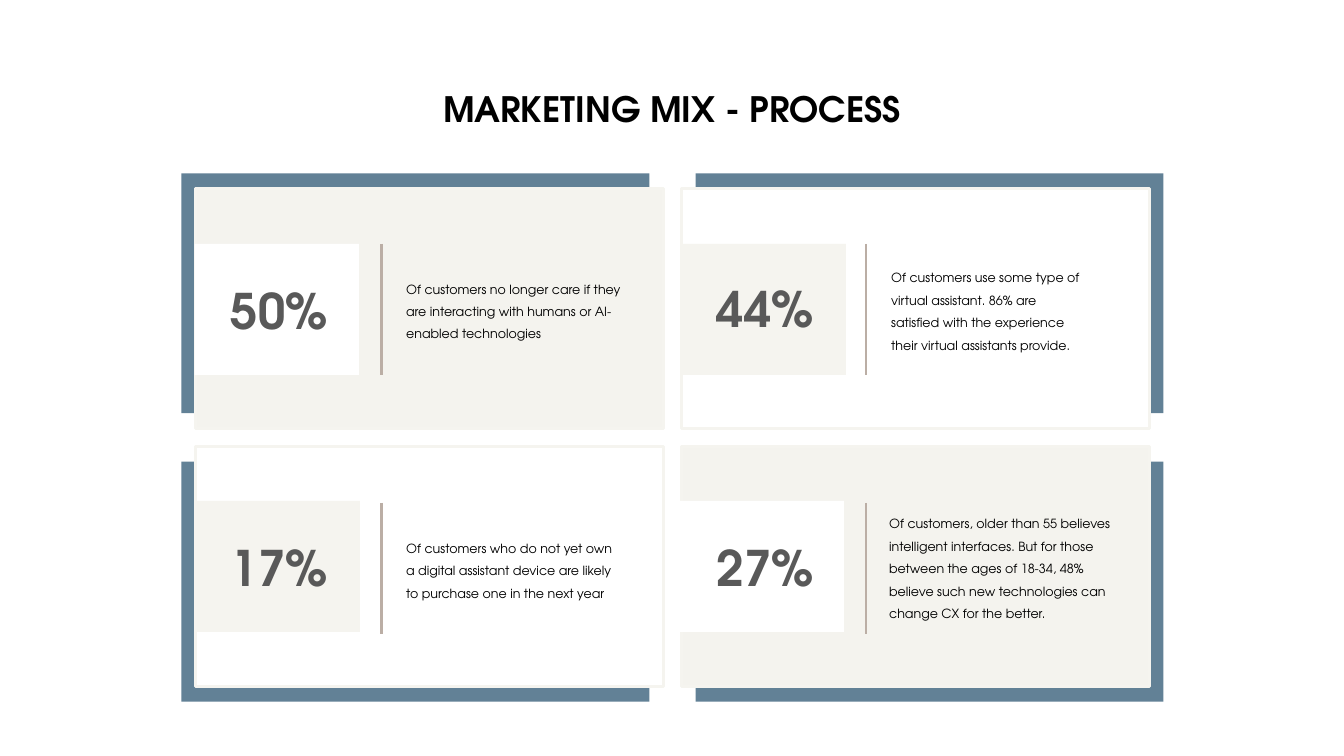
from pptx import Presentation
from pptx.dml.color import RGBColor
from pptx.enum.shapes import MSO_CONNECTOR, MSO_SHAPE
from pptx.enum.text import MSO_ANCHOR, PP_ALIGN
from pptx.oxml.ns import qn
from pptx.util import Inches, Pt

RECTANGLE, STRAIGHT = MSO_SHAPE.RECTANGLE, MSO_CONNECTOR.STRAIGHT
MIDDLE, LEFT, CENTER = MSO_ANCHOR.MIDDLE, PP_ALIGN.LEFT, PP_ALIGN.CENTER
FONT = "TeX Gyre Adventor"
BLUE, CREAM, WHITE = "628196", "F4F3EE", "FFFFFF"
BORDER, DIVIDER = "F5F4EF", "BBAEA5"
BLACK, GREY = "000000", "595959"
CARD_WIDTH, CARD_HEIGHT = 4.64, 2.38
CHIP_WIDTH, CHIP_HEIGHT = 1.63, 1.3

COLUMNS = [
    {"frame": 1.8, "card": 1.94, "divider": 3.78, "number": 2.19},
    {"frame": 6.9, "card": 6.76, "divider": 8.59, "number": 7.01},
]
ROWS = [
    {"frame": 1.72, "card": 1.87, "divider": 2.42, "chip": 2.42},
    {"frame": 4.58, "card": 4.43, "divider": 4.99, "chip": 4.97},
]
# column, row, card fill, chip fill, chip left, number top, percentage, statement box, statement
CARDS = [
    (0, 0, CREAM, WHITE, 1.93, 2.73, "50%", (3.93, 2.68, 2.32, 0.75),
     "Of customers no longer care if they are interacting with humans or "
     "AI-enabled technologies"),
    (1, 0, WHITE, BORDER, 6.76, 2.71, "44%", (8.74, 2.57, 2.09, 0.97),
     "Of customers use some type of virtual assistant. 86% are satisfied with "
     "the experience their virtual assistants provide."),
    (0, 1, WHITE, BORDER, 1.94, 5.28, "17%", (3.93, 5.25, 2.32, 0.75),
     "Of customers who do not yet own a digital assistant device are likely "
     "to purchase one in the next year"),
    (1, 1, CREAM, WHITE, 6.74, 5.28, "27%", (8.72, 5.01, 2.48, 1.19),
     "Of customers, older than 55 believes intelligent interfaces. But for "
     "those between the ages of 18-34, 48% believe such new technologies can "
     "change CX for the better."),
]

prs = Presentation()
prs.slide_width, prs.slide_height = Inches(13.33), Inches(7.5)
slide = prs.slides.add_slide(prs.slide_layouts[5])
shapes = slide.shapes


def add_panel(left, top, width, height, fill, border=None):
    panel = shapes.add_shape(
        RECTANGLE, Inches(left), Inches(top), Inches(width), Inches(height))
    panel.shadow.inherit = False
    panel.fill.solid()
    panel.fill.fore_color.rgb = RGBColor.from_string(fill)
    if border:
        panel.line.color.rgb = RGBColor.from_string(border)
        panel.line.width = Pt(2)
    else:
        panel.line.fill.background()


def write_text(box, text, color, frame_format, paragraph_format, font_format):
    frame = box.text_frame
    frame.text = text
    paragraph = frame.paragraphs[0]
    font = paragraph.runs[0].font
    font.color.rgb = RGBColor.from_string(color)
    font.name = FONT
    for target, values in ((frame, frame_format), (paragraph, paragraph_format),
                           (font, font_format)):
        for attribute, value in values.items():
            setattr(target, attribute, value)


title = shapes.title
title.left, title.top, title.width, title.height = map(Inches, (4.27, 0.82, 4.79, 0.52))
write_text(title, "MARKETING MIX - PROCESS", BLACK,
           {"word_wrap": False, "vertical_anchor": MIDDLE},
           {"alignment": CENTER}, {"size": Pt(25), "bold": True})

for row in ROWS:
    for column in COLUMNS:
        add_panel(column["frame"], row["frame"], CARD_WIDTH, CARD_HEIGHT, BLUE)

for (column_index, row_index, card_fill, chip_fill, chip_left, number_top,
     percentage, statement_box, statement) in CARDS:
    column, row = COLUMNS[column_index], ROWS[row_index]
    add_panel(column["card"], row["card"], CARD_WIDTH, CARD_HEIGHT, card_fill, BORDER)

    divider_x, divider_y = Inches(column["divider"]), row["divider"]
    divider = shapes.add_connector(STRAIGHT, divider_x, Inches(divider_y),
                                   divider_x, Inches(divider_y + CHIP_HEIGHT))
    divider.line.color.rgb = RGBColor.from_string(DIVIDER)
    divider.line.width = Pt(2)
    properties = divider._element.spPr
    properties.append(properties.makeelement(qn("a:effectLst"), {}))

    write_text(shapes.add_textbox(*map(Inches, statement_box)), statement, BLACK,
               {"word_wrap": True, "vertical_anchor": MIDDLE},
               {"alignment": LEFT, "line_spacing": Pt(16)}, {"size": Pt(9)})

    add_panel(chip_left, row["chip"], CHIP_WIDTH, CHIP_HEIGHT, chip_fill)
    number = shapes.add_textbox(Inches(column["number"]), Inches(number_top),
                                Inches(1.17), Inches(0.69))
    write_text(number, percentage, GREY, {"word_wrap": False},
               {"alignment": LEFT}, {"size": Pt(35), "bold": True})

prs.save("out.pptx")
